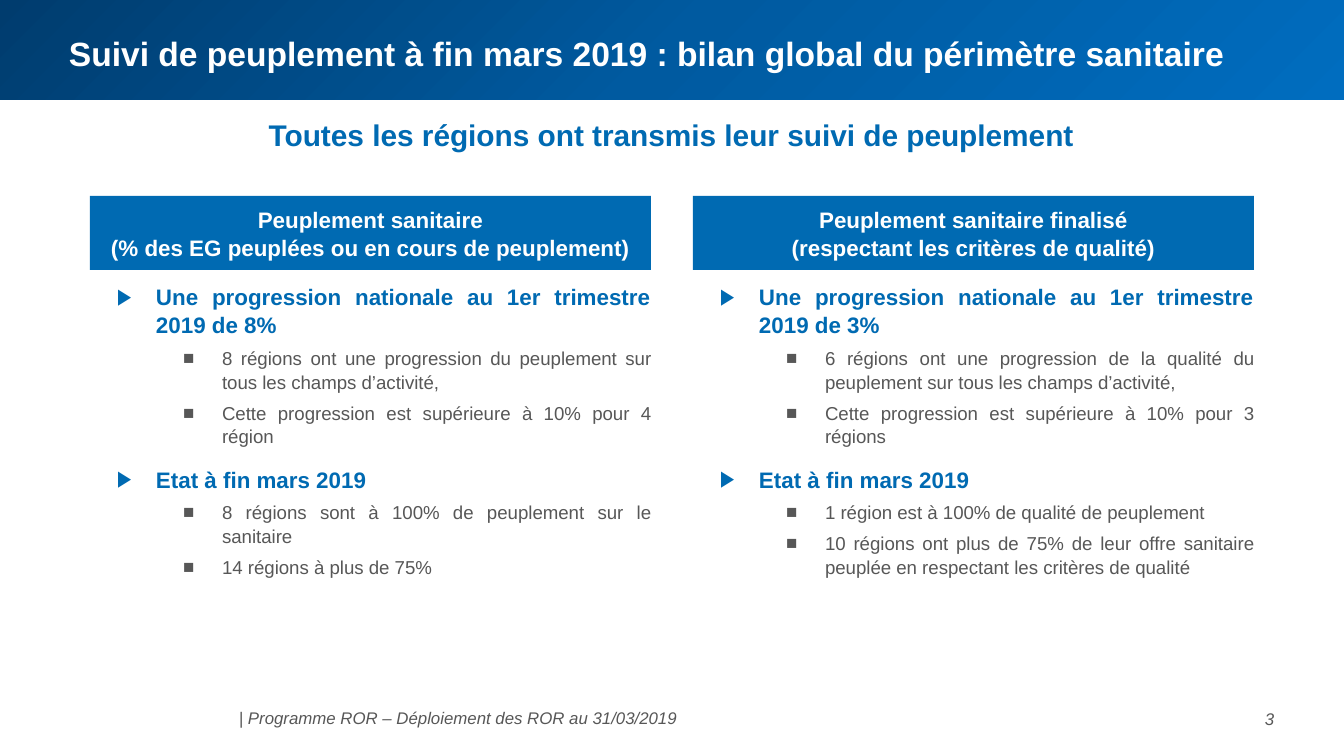
from lxml import etree
from pptx import Presentation
from pptx.dml.color import RGBColor
from pptx.enum.shapes import MSO_SHAPE
from pptx.enum.text import MSO_ANCHOR, MSO_AUTO_SIZE, PP_ALIGN
from pptx.oxml.ns import qn
from pptx.util import Emu, Pt

RECTANGLE = MSO_SHAPE.RECTANGLE
TOP, MIDDLE = MSO_ANCHOR.TOP, MSO_ANCHOR.MIDDLE
LEFT, CENTER, JUSTIFY = PP_ALIGN.LEFT, PP_ALIGN.CENTER, PP_ALIGN.JUSTIFY
NO_AUTOFIT = MSO_AUTO_SIZE.NONE
SCALE = 914400 / 134.4
FONT = "Arial"
BLUE, GREY, WHITE = "006AB2", "575757", "FFFFFF"
BANNER_STOPS = [(0, "003C6E"), (50, "005AA0"), (100, "006DBF")]
TWO_CONTENT_LAYOUT = 3
COLUMN_LEFT, COLUMN_PITCH, COLUMN_WIDTH = 90, 603, 561

LEVELS = {
    1: dict(size=12, color=BLUE, bold=True, before=9, bullet="▶", margin=66),
    2: dict(size=10, color=GREY, before=4, bullet="■", margin=132),
}
COLUMNS = [
    (
        ["Peuplement sanitaire", "(% des EG peuplées ou en cours de peuplement)"],
        [
            (1, "Une progression nationale au 1er trimestre 2019 de 8%"),
            (2, "8 régions ont une progression du peuplement sur tous les champs d’activité,"),
            (2, "Cette progression est supérieure à 10% pour 4 région"),
            (1, "Etat à fin mars 2019"),
            (2, "8 régions sont à 100% de peuplement sur le sanitaire"),
            (2, "14 régions à plus de 75%"),
        ],
    ),
    (
        ["Peuplement sanitaire finalisé", "(respectant les critères de qualité)"],
        [
            (1, "Une progression nationale au 1er trimestre 2019 de 3%"),
            (2, "6 régions ont une progression de la qualité du peuplement sur tous les champs d’activité,"),
            (2, "Cette progression est supérieure à 10% pour 3 régions"),
            (1, "Etat à fin mars 2019"),
            (2, "1 région est à 100% de qualité de peuplement"),
            (2, "10 régions ont plus de 75% de leur offre sanitaire peuplée en respectant les critères de qualité"),
        ],
    ),
]


def px(length):
    """Turn pixels into EMU."""
    return Emu(round(length * SCALE))


def rgb(color):
    """Turn a hex string into a colour."""
    return RGBColor.from_string(color)


def place(shape, left, top, width, height):
    """Move and size a shape."""
    shape.left, shape.top = px(left), px(top)
    shape.width, shape.height = px(width), px(height)


def set_frame(shape, anchor=TOP, inset=(0, 0)):
    """Set up the text frame of a shape and return it."""
    frame = shape.text_frame
    frame.word_wrap = True
    frame.auto_size = NO_AUTOFIT
    frame.vertical_anchor = anchor
    frame.margin_left = frame.margin_right = px(inset[0])
    frame.margin_top = frame.margin_bottom = px(inset[1])
    return frame


def add_bullet(para, symbol, color, margin):
    """Give a paragraph a bullet with a hanging indent."""
    properties = para._p.get_or_add_pPr()
    properties.set("marL", str(px(margin)))
    properties.set("indent", str(px(-39)))
    tint = etree.SubElement(properties, qn("a:buClr"))
    etree.SubElement(tint, qn("a:srgbClr"), val=color)
    etree.SubElement(properties, qn("a:buFont"), typeface=FONT)
    etree.SubElement(properties, qn("a:buChar"), char=symbol)


def write(frame, text, size=12, color=GREY, bold=False, italic=False, align=LEFT,
          spacing=1.0, before=0, bullet=None, margin=0, level=0):
    """Write one formatted paragraph at the end of a frame."""
    first = not frame.text
    para = frame.paragraphs[0] if first else frame.add_paragraph()
    para.level = level
    para.alignment = align
    para.line_spacing = spacing
    para.space_before = Pt(0 if first else before)
    if bullet:
        add_bullet(para, bullet, color, margin)
    span = para.add_run()
    span.text = text
    font = span.font
    font.name, font.size = FONT, Pt(size)
    font.bold, font.italic = bold, italic
    font.color.rgb = rgb(color)


def add_text(page, area, text, anchor=TOP, inset=(0, 0), **style):
    """Add a text box with one paragraph."""
    box = page.shapes.add_textbox(*map(px, area))
    write(set_frame(box, anchor, inset), text, **style)


def add_rectangle(page, area, color):
    """Add a plain filled rectangle."""
    box = page.shapes.add_shape(RECTANGLE, *map(px, area))
    box.shadow.inherit = False
    box.fill.solid()
    box.fill.fore_color.rgb = rgb(color)
    box.line.fill.background()
    return box


def add_banner(page):
    """Add the title band with a gradient spreading from its top left corner."""
    banner = add_rectangle(page, (0, 0, 1344, 100), BLUE)
    gradient = etree.Element(qn("a:gradFill"), rotWithShape="1")
    stops = etree.SubElement(gradient, qn("a:gsLst"))
    for percent, color in BANNER_STOPS:
        stop = etree.SubElement(stops, qn("a:gs"), pos=str(percent * 1000))
        etree.SubElement(stop, qn("a:srgbClr"), val=color)
    path_fill = etree.SubElement(gradient, qn("a:path"), path="circle")
    etree.SubElement(path_fill, qn("a:fillToRect"), r="100000", b="100000")
    properties = banner._element.spPr
    properties.replace(properties.find(qn("a:solidFill")), gradient)
    page.shapes._spTree.insert(2, banner._element)


def add_column(page, body, left, heading, items):
    """Fill one column: a heading box above a two-level list."""
    box = add_rectangle(page, (left, 196, COLUMN_WIDTH, 74), BLUE)
    frame = set_frame(box, MIDDLE, (11, 16))
    for line in heading:
        write(frame, line, color=WHITE, bold=True, align=CENTER, spacing=1.05)
    place(body, left, 282, COLUMN_WIDTH, 338)
    frame = set_frame(body)
    for level, text in items:
        write(frame, text, align=JUSTIFY, spacing=1.05, level=level - 1, **LEVELS[level])


def main():
    """Build the slide and save it."""
    deck = Presentation()
    deck.slide_width, deck.slide_height = px(1344), px(756)
    page = deck.slides.add_slide(deck.slide_layouts[TWO_CONTENT_LAYOUT])
    title, *bodies = page.placeholders
    add_banner(page)
    place(title, 69, 13, 1207, 79)
    write(set_frame(title, MIDDLE), "Suivi de peuplement à fin mars 2019 : bilan global du périmètre sanitaire",
          size=18, color=WHITE, bold=True, spacing=Pt(22))
    add_text(page, (58, 113, 1227, 52), "Toutes les régions ont transmis leur suivi de peuplement",
             size=16, color=BLUE, bold=True, align=CENTER, spacing=1.1)
    for index, (body, (heading, items)) in enumerate(zip(bodies, COLUMNS)):
        add_column(page, body, COLUMN_LEFT + index * COLUMN_PITCH, heading, items)
    add_text(page, (226, 698, 1017, 40), "| Programme ROR – Déploiement des ROR au 31/03/2019",
             anchor=MIDDLE, inset=(13, 7), size=9, italic=True)
    add_text(page, (1265, 699, 42, 40), "3", anchor=MIDDLE, size=9, italic=True)
    deck.save("out.pptx")


if __name__ == "__main__":
    main()
